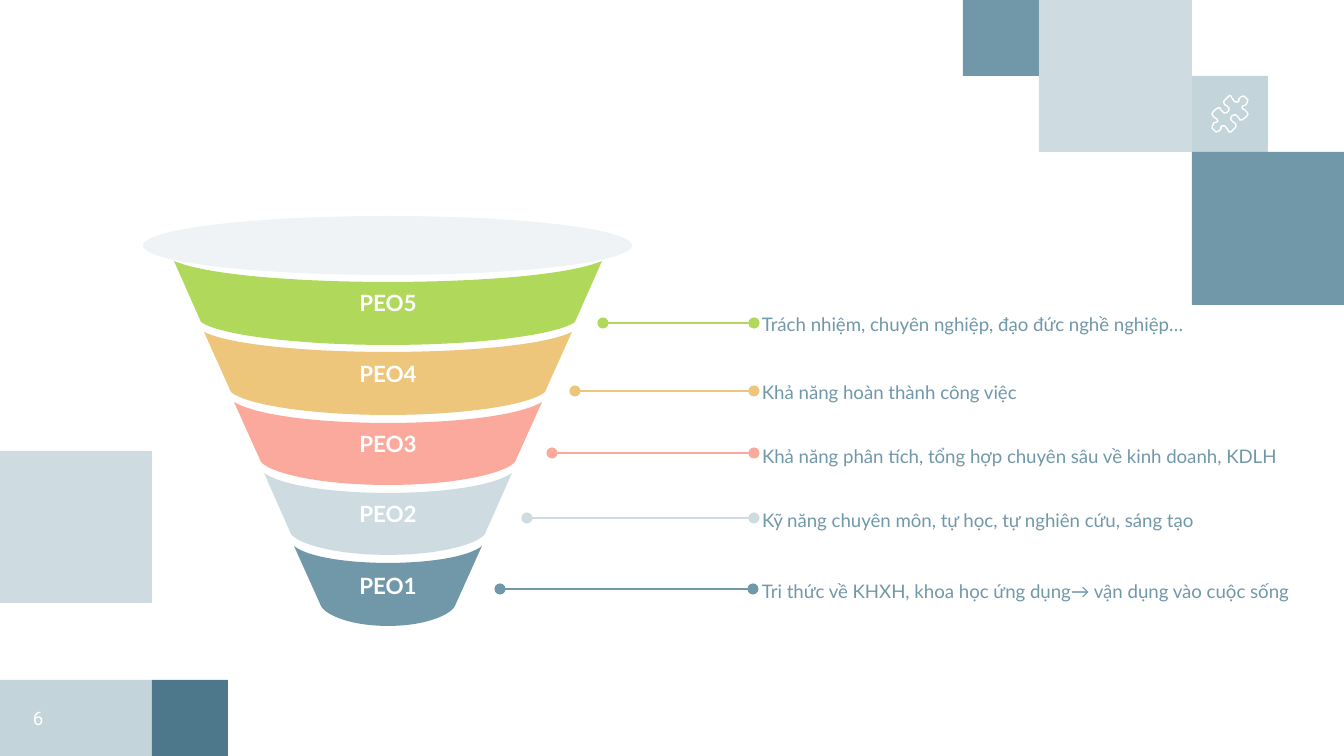
from lxml import etree
from pptx import Presentation
from pptx.dml.color import RGBColor
from pptx.enum.shapes import MSO_CONNECTOR, MSO_SHAPE
from pptx.enum.text import MSO_ANCHOR, PP_ALIGN
from pptx.oxml.ns import qn
from pptx.util import Pt

PX = 914400 / 134.4
RECTANGLE, OVAL = MSO_SHAPE.RECTANGLE, MSO_SHAPE.OVAL
STRAIGHT = MSO_CONNECTOR.STRAIGHT
MIDDLE = MSO_ANCHOR.MIDDLE
LEFT, CENTER = PP_ALIGN.LEFT, PP_ALIGN.CENTER

THEME = {
    "blue": "7198A9", "pale": "CEDBE0", "deep": "4D778A", "rim": "EFF3F5",
    "green": "B0D85B", "amber": "EDC67B", "coral": "FAA99C", "white": "FFFFFF",
    "font": "Lato", "number_font": "Roboto",
    "label": 12, "body": 10, "line": 0.75,
}


def write_text(shape, text, size=THEME["body"], color="blue", font=THEME["font"],
               bold=False, align=LEFT, margins=(0, 0)):
    frame = shape.text_frame
    frame.word_wrap = True
    frame.vertical_anchor = MIDDLE
    frame.margin_left = frame.margin_right = round(margins[0] * PX)
    frame.margin_top = frame.margin_bottom = round(margins[1] * PX)
    paragraph = frame.paragraphs[0]
    paragraph.alignment = align
    run = paragraph.add_run()
    run.text = text
    run.font.size = Pt(size)
    run.font.name = font
    run.font.bold = bold
    run.font.color.rgb = RGBColor.from_string(THEME[color])


def curve(start, control_1, control_2, end, steps=24):
    points = []
    for step in range(steps + 1):
        t = step / steps
        weights = ((1 - t) ** 3, 3 * t * (1 - t) ** 2, 3 * t * t * (1 - t), t ** 3)
        corners = (start, control_1, control_2, end)
        points.append(tuple(sum(w * c[axis] for w, c in zip(weights, corners))
                            for axis in (0, 1)))
    return points


presentation = Presentation()
presentation.slide_width = round(1344 * PX)
presentation.slide_height = round(756 * PX)
slide = presentation.slides.add_slide(presentation.slide_layouts[6])
shapes = slide.shapes

# Decorative squares and the rim of the funnel: kind, box, colour, opacity
blocks = [
    (RECTANGLE, 1192, 152, 152, 153, "blue", 100),
    (RECTANGLE, 1192, 76, 76, 76, "blue", 41),
    (RECTANGLE, 1039, 0, 153, 152, "pale", 100),
    (RECTANGLE, 963, 0, 76, 76, "blue", 100),
    (RECTANGLE, 0, 451, 152, 152, "pale", 100),
    (RECTANGLE, 152, 680, 76, 76, "deep", 100),
    (RECTANGLE, 0, 680, 152, 76, "blue", 41),
    (OVAL, 143, 216, 489, 59, "rim", 100),
]
for kind, *box, color, opacity in blocks:
    block = shapes.add_shape(kind, *(round(length * PX) for length in box))
    block.shadow.inherit = False
    block.line.fill.background()
    block.fill.solid()
    block.fill.fore_color.rgb = RGBColor.from_string(THEME[color])
    if opacity < 100:
        color_node = block.fill._xPr.find(qn("a:solidFill"))[0]
        etree.SubElement(color_node, qn("a:alpha")).set("val", str(opacity * 1000))

# Puzzle piece: the second half of the outline is the first turned by 180 degrees
half_piece = [
    (13, -8), (16, -9), (17, -11), (18, -14), (16, -16), (14, -18), (11, -17),
    (9, -15), (9, -13), (8, -12), (6, -12), (5, -12), (2, -16), (1, -18),
    (-1, -18), (-3, -16), (-4, -15), (-6, -13), (-6, -11), (-5, -9), (-3, -8),
    (-1, -6), (-1, -4), (-2, -2), (-4, -1), (-6, -1), (-8, -3), (-9, -4),
    (-10, -6), (-12, -6), (-15, -4), (-17, -2), (-18, 0), (-17, 2), (-15, 4),
    (-13, 5), (-12, 7),
]
piece = half_piece + [(-x, -y) for x, y in half_piece]
outline = [((1230 + x) * PX, (114 + y) * PX) for x, y in piece]
builder = shapes.build_freeform(*outline[0])
builder.add_line_segments(outline[1:], close=True)
puzzle = builder.convert_to_shape()
puzzle.shadow.inherit = False
puzzle.fill.background()
puzzle.line.color.rgb = RGBColor.from_string(THEME["white"])
puzzle.line.width = Pt(THEME["line"])

# Page number
number_box = shapes.add_textbox(0, round(680 * PX), round(76 * PX), round(76 * PX))
write_text(number_box, "6", color="white", font=THEME["number_font"],
           align=CENTER, margins=(13, 13))

# Funnel levels: label, colour, (top, sag, shoulder, bottom),
# pointer (start x, end x, y), description box (top, width, height), description
levels = [
    ("PEO5", "green", (261, 282, 322, 345), (603, 754, 323), (301, 478, 47),
     "Trách nhiệm, chuyên nghiệp, đạo đức nghề nghiệp…"),
    ("PEO4", "amber", (332, 352, 392, 415), (575, 754, 391), (371, 347, 43),
     "Khả năng hoàn thành công việc"),
    ("PEO3", "coral", (402, 423, 462, 485), (552, 754, 453), (431, 544, 50),
     "Khả năng phân tích, tổng hợp chuyên sâu về kinh doanh, KDLH"),
    ("PEO2", "pale", (473, 493, 534, 555), (527, 754, 518), (491, 544, 59),
     "Kỹ năng chuyên môn, tự học, tự nghiên cứu, sáng tạo"),
    ("PEO1", "blue", (546, 563, 606, 626), (500, 753, 589), (562, 558, 59),
     "Tri thức về KHXH, khoa học ứng dụng→ vận dụng vào cuộc sống"),
]
FUNNEL_CENTER = 388
for index, (label, color, heights, pointer, box, description) in enumerate(levels):
    top, sag, shoulder, bottom = heights
    upper = 214 - 30 * index
    lower = upper - 27
    fill_color = RGBColor.from_string(THEME[color])

    # Band: left half from centre top to centre bottom, then mirrored
    left_half = curve((0, sag), (-0.42 * upper, sag),
                      (-0.85 * upper, top + 0.67 * (sag - top)), (-upper, top))
    left_half += curve((-lower, shoulder), (-0.92 * lower, shoulder + 0.5 * (bottom - shoulder)),
                       (-0.53 * lower, bottom), (0, bottom))
    band_points = left_half + [(-x, y) for x, y in reversed(left_half)]
    outline = [((FUNNEL_CENTER + x) * PX, y * PX) for x, y in band_points]
    builder = shapes.build_freeform(*outline[0])
    builder.add_line_segments(outline[1:], close=True)
    band = builder.convert_to_shape()
    band.shadow.inherit = False
    band.fill.solid()
    band.fill.fore_color.rgb = fill_color
    band.line.fill.background()
    write_text(band, label, size=THEME["label"], color="white", bold=True,
               align=CENTER, margins=(9, 5))

    # Pointer with a dot at each end
    start_x, end_x, y = (round(length * PX) for length in pointer)
    connector = shapes.add_connector(STRAIGHT, start_x, y, end_x, y)
    connector.line.color.rgb = fill_color
    connector.line.width = Pt(THEME["line"])
    line_node = connector.line._get_or_add_ln()
    for end in ("a:headEnd", "a:tailEnd"):
        etree.SubElement(line_node, qn(end)).set("type", "oval")
    etree.SubElement(connector._element.spPr, qn("a:effectLst"))

    # Description
    box_top, width, height = (round(length * PX) for length in box)
    description_box = shapes.add_textbox(round(762 * PX), box_top, width, height)
    write_text(description_box, description)

presentation.save("out.pptx")
